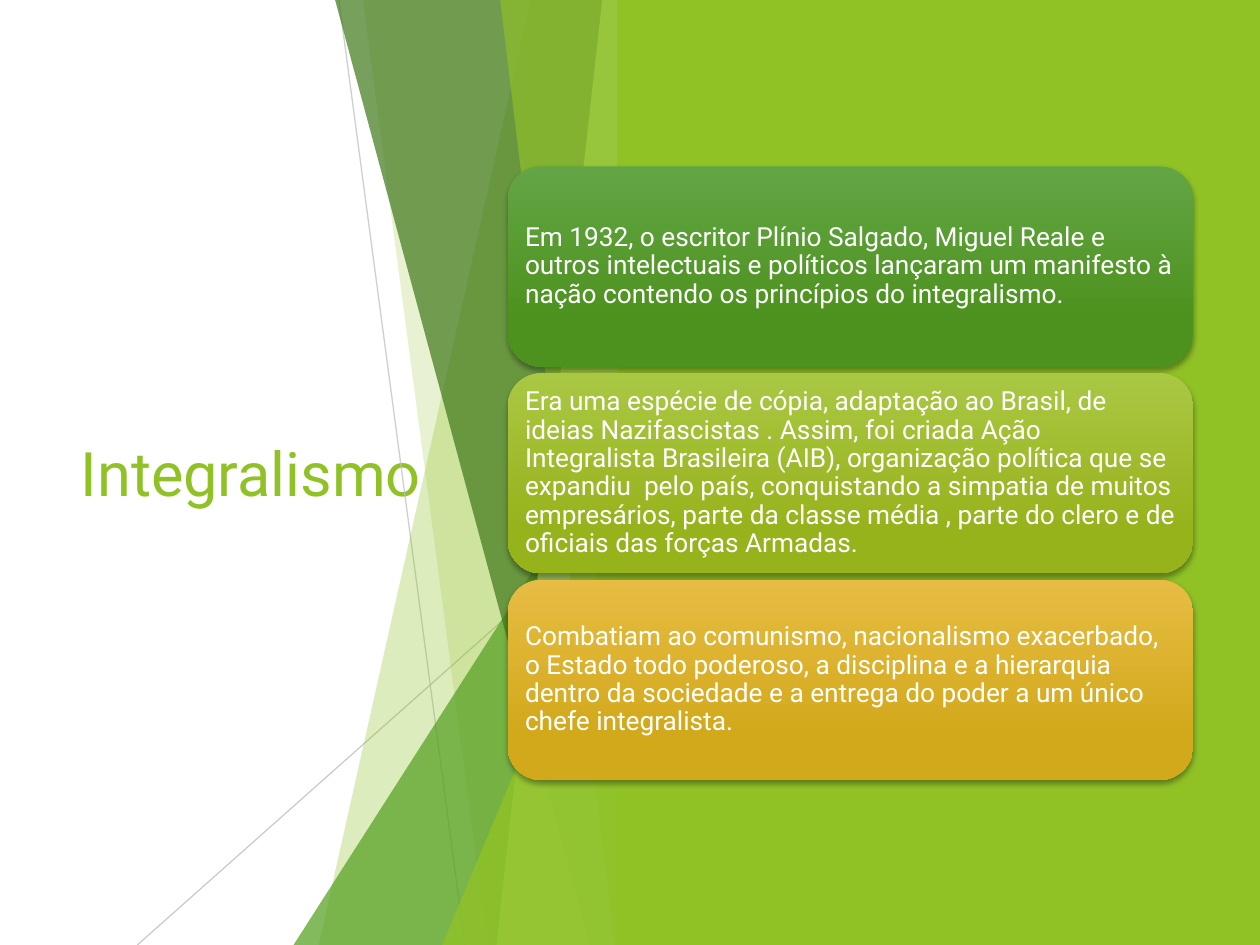
from dataclasses import dataclass

from lxml.etree import SubElement
from pptx import Presentation
from pptx.dml.color import RGBColor
from pptx.enum.shapes import MSO_CONNECTOR, MSO_SHAPE
from pptx.enum.text import MSO_ANCHOR, PP_ALIGN
from pptx.oxml.ns import qn
from pptx.util import Inches, Pt

SLIDE_WIDTH, SLIDE_HEIGHT = Inches(10), Inches(7.5)
GRID = 100
SPINE = 50


@dataclass(frozen=True)
class Theme:
    font: str = "Roboto"
    title_size: float = 35
    body_size: float = 15
    lime: str = "90C226"
    green: str = "54A021"
    dark_green: str = "3F7819"
    pale_lime: str = "C0E474"
    gray: str = "BFBFBF"
    white: str = "FFFFFF"
    black: str = "000000"


THEME = Theme()


@dataclass(frozen=True)
class Ray:
    start: tuple[float, float]
    end: tuple[float, float]
    opacity: int


@dataclass(frozen=True)
class Shard:
    top_column: float
    bottom_column: float
    color: str
    opacity: int


@dataclass(frozen=True)
class Wedge:
    column: float
    row: float
    color: str
    opacity: int


@dataclass(frozen=True)
class Card:
    top_color: str
    bottom_color: str
    text: str


RAYS = [Ray((26.9, 0), (36.9, 100), 75), Ray((50, 53.7), (10.9, 100), 80)]

FACETS = [
    Shard(42.1, 25.3, THEME.lime, 30),
    Shard(28.8, 38.7, THEME.lime, 20),
    Wedge(23.3, 44.4, THEME.green, 72),
    Shard(26.6, 46.8, THEME.dark_green, 70),
    Shard(47.8, 39.4, THEME.pale_lime, 70),
    Shard(39.7, 48.8, THEME.lime, 65),
    Wedge(35.1, 52.4, THEME.lime, 80),
]

CARDS = [
    Card("63A545", "4D921E",
         "Em 1932, o escritor Plínio Salgado, Miguel Reale e outros intelectuais e "
         "políticos lançaram um manifesto à nação contendo os princípios do integralismo."),
    Card("AAC744", "97B31C",
         "Era uma espécie de cópia, adaptação ao Brasil, de ideias Nazifascistas . "
         "Assim, foi criada Ação Integralista Brasileira (AIB), organização política "
         "que se expandiu  pelo país, conquistando a simpatia de muitos empresários, "
         "parte da classe média , parte do clero e de oficiais das forças Armadas."),
    Card("E7BC43", "D2A91B",
         "Combatiam ao comunismo, nacionalismo exacerbado, o Estado todo poderoso, "
         "a disciplina e a hierarquia dentro da sociedade e a entrega do poder a um "
         "único chefe integralista."),
]
CARD_LEFT, CARD_TOP, CARD_WIDTH, CARD_HEIGHT, CARD_GAP = 40.3, 17.6, 54.4, 21.2, 0.67


def across(columns: float) -> int:
    return round(SLIDE_WIDTH * columns / GRID)


def down(rows: float) -> int:
    return round(SLIDE_HEIGHT * rows / GRID)


def box(left: float, top: float, width: float, height: float) -> tuple[int, int, int, int]:
    return across(left), down(top), across(width), down(height)


def set_opacity(properties, percent: int) -> None:
    color = next(properties.iter(qn("a:srgbClr")))
    SubElement(color, qn("a:alpha"), val=str(percent * 1000))


def paint(shape, color: str, opacity: int = 100) -> None:
    shape.shadow.inherit = False
    shape.fill.solid()
    shape.fill.fore_color.rgb = RGBColor.from_string(color)
    shape.line.fill.background()
    if opacity < 100:
        set_opacity(shape.fill._xPr, opacity)


def write(shape, text: str, *, size: float, color: str, margin: tuple[float, float],
          line_spacing: float = 1.0) -> None:
    frame = shape.text_frame
    frame.word_wrap = True
    frame.vertical_anchor = MSO_ANCHOR.MIDDLE
    frame.margin_left = frame.margin_right = Inches(margin[0])
    frame.margin_top = frame.margin_bottom = Inches(margin[1])
    paragraph = frame.paragraphs[0]
    paragraph.alignment = PP_ALIGN.LEFT
    paragraph.line_spacing = line_spacing
    run = paragraph.add_run()
    run.text = text
    run.font.name = THEME.font
    run.font.size = Pt(size)
    run.font.color.rgb = RGBColor.from_string(color)


def draw_ray(slide, ray: Ray) -> None:
    (start_column, start_row), (end_column, end_row) = ray.start, ray.end
    connector = slide.shapes.add_connector(
        MSO_CONNECTOR.STRAIGHT, across(start_column), down(start_row),
        across(end_column), down(end_row))
    connector.line.width = Pt(0.75)
    connector.line.color.rgb = RGBColor.from_string(THEME.gray)
    properties = connector._element.spPr
    set_opacity(properties, ray.opacity)
    SubElement(properties, qn("a:effectLst"))


def draw_facet(slide, facet: Shard | Wedge) -> None:
    if isinstance(facet, Shard):
        builder = slide.shapes.build_freeform(across(facet.top_column), 0)
        builder.add_line_segments([
            (across(SPINE), 0), (across(SPINE), SLIDE_HEIGHT),
            (across(facet.bottom_column), SLIDE_HEIGHT)], close=True)
        shape = builder.convert_to_shape()
    else:
        shape = slide.shapes.add_shape(
            MSO_SHAPE.ISOSCELES_TRIANGLE,
            *box(facet.column, facet.row, SPINE - facet.column, GRID - facet.row))
        shape.adjustments[0] = 1
    paint(shape, facet.color, facet.opacity)


def draw_card(slide, card: Card, index: int) -> None:
    top = CARD_TOP + index * (CARD_HEIGHT + CARD_GAP)
    shape = slide.shapes.add_shape(
        MSO_SHAPE.ROUNDED_RECTANGLE, *box(CARD_LEFT, top, CARD_WIDTH, CARD_HEIGHT))
    shape.shadow.inherit = False
    shape.line.fill.background()
    shape.fill.gradient()
    shape.fill.gradient_angle = 270
    stops = zip(shape.fill.gradient_stops, (0, 0.78), (card.top_color, card.bottom_color))
    for stop, position, color in stops:
        stop.position = position
        stop.color.rgb = RGBColor.from_string(color)
    effects = shape._element.spPr.find(qn("a:effectLst"))
    shadow = SubElement(effects, qn("a:outerShdw"), blurRad=str(Pt(3)), dist=str(Pt(2)),
                        dir="5400000", algn="ctr", rotWithShape="0")
    SubElement(shadow, qn("a:srgbClr"), val=THEME.black)
    set_opacity(shadow, 35)
    write(shape, card.text, size=THEME.body_size, color=THEME.white,
          margin=(0.06, 0.06), line_spacing=0.9)


def main() -> None:
    presentation = Presentation()
    presentation.slide_width, presentation.slide_height = SLIDE_WIDTH, SLIDE_HEIGHT
    slide = presentation.slides.add_slide(presentation.slide_layouts.get_by_name("Title Only"))
    title = slide.shapes.title
    title.left, title.top, title.width, title.height = box(5.4, 20.1, 29.1, 59.7)
    write(title, "Integralismo", size=THEME.title_size, color=THEME.lime, margin=(0.1, 0.05))
    for ray in RAYS:
        draw_ray(slide, ray)
    for facet in FACETS:
        draw_facet(slide, facet)
    panel = slide.shapes.add_shape(MSO_SHAPE.RECTANGLE, *box(49, 0, 51, 100))
    paint(panel, THEME.lime)
    for index, card in enumerate(CARDS):
        draw_card(slide, card, index)
    presentation.save("out.pptx")


if __name__ == "__main__":
    main()
